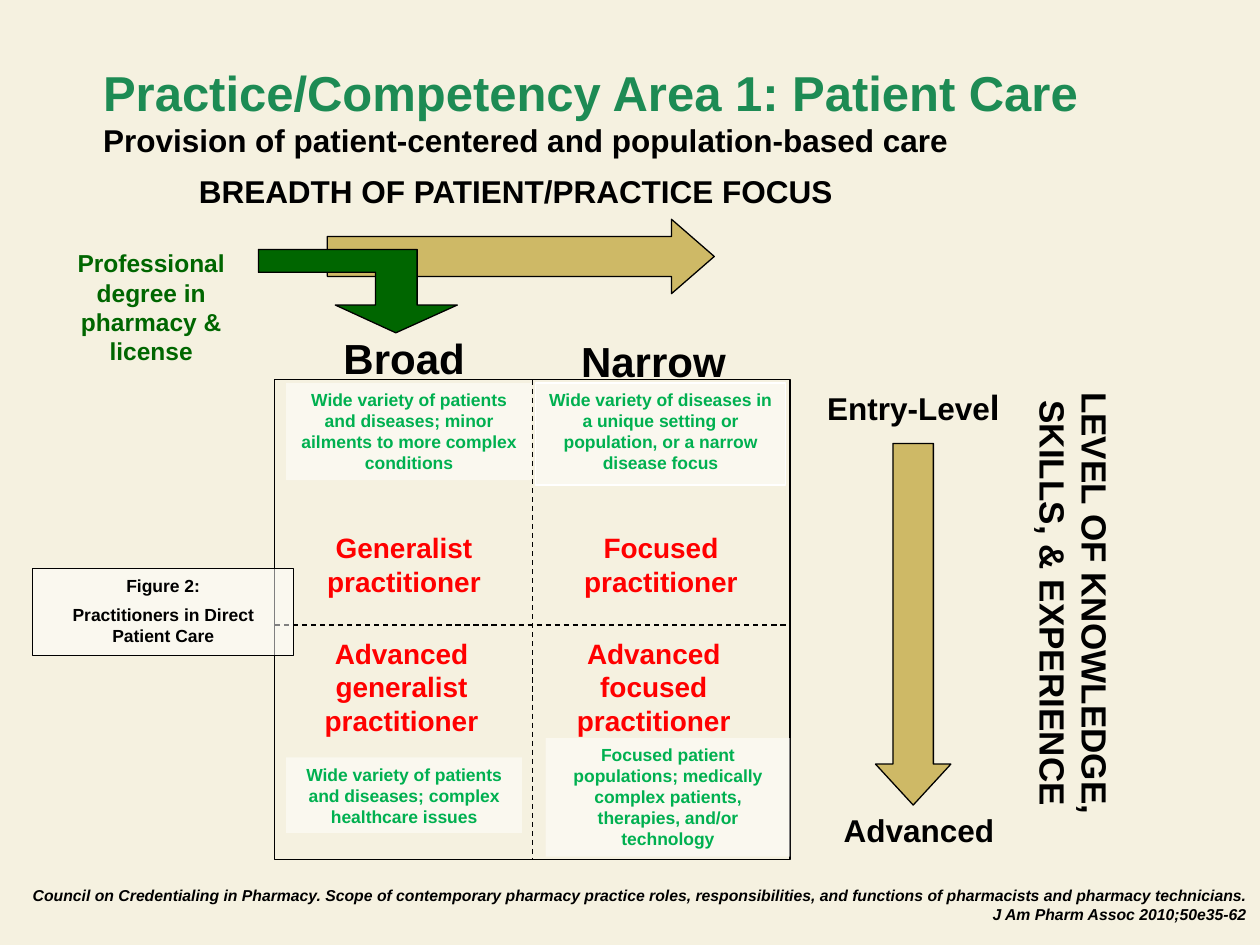
import pptx
import pptx.util
import pptx.dml.color
import pptx.enum.dml
import pptx.enum.shapes
import pptx.enum.text
import pptx.oxml.ns
import lxml.etree

Cm, Pt = pptx.util.Cm, pptx.util.Pt
Shape = pptx.enum.shapes.MSO_SHAPE
Align = pptx.enum.text.PP_ALIGN
Anchor = pptx.enum.text.MSO_ANCHOR

BLACK, WHITE, RED = "000000", "FFFFFF", "FF0000"
TITLE, GREEN, LEAF, GOLD = "1D8B54", "006600", "00B050", "CEB966"


def color(code):
    return pptx.dml.color.RGBColor.from_string(code)


def write(para, words, size=18, fill=BLACK, italic=False, font="Arial"):
    """Add one bold run to a paragraph."""
    run = para.add_run()
    run.text = words
    run.font.name, run.font.size = font, Pt(size)
    run.font.bold, run.font.italic = True, italic
    run.font.color.rgb = color(fill)


class Deck:
    def __init__(self, back):
        self.show = pptx.Presentation()
        self.show.slide_width, self.show.slide_height = Cm(25.4), Cm(19.05)
        self.slide = self.show.slides.add_slide(self.show.slide_layouts[6])
        self.slide.background.fill.solid()
        self.slide.background.fill.fore_color.rgb = color(back)
        self.shapes = self.slide.shapes

    def style(self, shape, fill=None, line=None, alpha=None):
        shape.shadow.inherit = False
        if fill:
            shape.fill.solid()
            shape.fill.fore_color.rgb = color(fill)
        else:
            shape.fill.background()
        if alpha:
            tint = shape.fill._xPr.find(".//" + pptx.oxml.ns.qn("a:srgbClr"))
            lxml.etree.SubElement(tint, pptx.oxml.ns.qn("a:alpha"), val=str(alpha * 1000))
        if line:
            shape.line.color.rgb = color(line)
            shape.line.width = Pt(0.75)
        else:
            shape.line.fill.background()
        return shape

    def block(self, area, kind=Shape.RECTANGLE, **look):
        return self.style(self.shapes.add_shape(kind, *map(Cm, area)), **look)

    def arrow(self, area, head, turn=0):
        shape = self.block(area, Shape.DOWN_ARROW, fill=GOLD, line=BLACK)
        shape.adjustments[0], shape.adjustments[1] = 0.536, head
        shape.rotation = turn

    def outline(self, points, **look):
        spots = [(Cm(x), Cm(y)) for x, y in points]
        maker = self.shapes.build_freeform(*spots[0])
        maker.add_line_segments(spots[1:], close=True)
        self.style(maker.convert_to_shape(), **look)

    def dash(self, *ends):
        line = self.shapes.add_connector(pptx.enum.shapes.MSO_CONNECTOR.STRAIGHT, *map(Cm, ends))
        line.line.color.rgb = color(BLACK)
        line.line.width = Pt(0.75)
        line.line.dash_style = pptx.enum.dml.MSO_LINE.DASH
        lxml.etree.SubElement(line._element.spPr, pptx.oxml.ns.qn("a:effectLst"))

    def fill(self, shape, lines, align=Align.CENTER, anchor=Anchor.TOP, gap=0, **form):
        frame = shape.text_frame
        frame.word_wrap, frame.vertical_anchor = True, anchor
        for i, words in enumerate(lines):
            para = frame.add_paragraph() if i else frame.paragraphs[0]
            para.alignment = align
            if i and gap:
                para.space_before = Pt(gap)
            write(para, words, **form)
        return frame

    def label(self, area, *lines, turn=0, **form):
        box = self.shapes.add_textbox(*map(Cm, area))
        box.rotation = turn
        return self.fill(box, lines, **form)

    def note(self, area, *lines, line=None, fill=LEAF, gap=0):
        box = self.block(area, fill=WHITE, alpha=50, line=line)
        self.fill(box, lines, size=10, fill=fill, gap=gap)


def main():
    deck = Deck("F5F1E0")

    # Title
    head = deck.label((1.83, 1.7, 23.14, 2.49), "Practice/Competency Area 1: Patient Care",
                      align=Align.LEFT, anchor=Anchor.MIDDLE, size=28, fill=TITLE)
    head.margin_bottom = Cm(1.55)
    head.paragraphs[0].add_line_break()
    write(head.paragraphs[0], "Provision of patient-centered and population-based care")

    # Grid of four fields
    left, top, wide, high = 5.54, 7.65, 10.39, 9.68
    deck.block((left, top, wide, high), line=BLACK)
    deck.dash(left, 12.6, left + wide, 12.6)
    deck.dash(10.74, top, 10.74, top + high)

    # Level axis
    deck.arrow((17.65, 8.94, 1.52, 7.29), 0.543)
    deck.label((15.85, 11.18, 11.61, 1.96), "LEVEL OF KNOWLEDGE, SKILLS, & EXPERIENCE",
               turn=90, size=20)
    deck.label((16.15, 16.23, 4.75, 1.02), "Advanced")
    entry = deck.label((16.36, 7.65, 4.11, 1.12), "Entry-Leve")
    write(entry.paragraphs[0], "l", size=20)

    # Breadth axis
    deck.arrow((9.75, 1.27, 1.5, 7.8), 0.575, turn=270)
    deck.label((3.15, 3.35, 14.5, 1.02), "BREADTH OF PATIENT/PRACTICE FOCUS")
    deck.label((6.17, 6.58, 3.45, 1.02), "Broad", align=Align.RIGHT, size=24)
    deck.label((11.43, 6.63, 3.45, 1.02), "Narrow", align=Align.RIGHT, size=24)

    # Degree and its bent arrow
    deck.label((1.27, 4.88, 3.56, 2.62), "Professional degree in pharmacy & license",
               size=14, fill=GREEN)
    deck.outline([(7.98, 6.71), (6.76, 6.15), (7.57, 6.15), (7.57, 5.49), (5.21, 5.49),
                  (5.21, 5.03), (8.41, 5.03), (8.41, 6.15), (9.22, 6.15)],
                 fill=GREEN, line=BLACK)

    # Roles
    for area, role in [
        ((5.82, 10.57, 4.65, 1.63), "Generalist practitioner"),
        ((11, 10.57, 4.65, 1.63), "Focused practitioner"),
        ((5.77, 12.7, 4.65, 2.31), "Advanced generalist practitioner"),
        ((10.54, 12.7, 5.28, 2.31), "Advanced focused practitioner"),
    ]:
        deck.label(area, role, size=16, fill=RED)

    # Notes on each role
    for area, words, line in [
        ((5.77, 7.72, 4.95, 1.96), "Wide variety of patients and diseases; "
         "minor ailments to more complex conditions", None),
        ((10.8, 7.72, 5.03, 2.06), "Wide variety of diseases in a unique setting or "
         "population, or a narrow disease focus", WHITE),
        ((5.77, 15.27, 4.75, 1.52), "Wide variety of patients and diseases; "
         "complex healthcare issues", None),
        ((11, 14.88, 4.93, 2.39), "Focused patient populations; medically complex "
         "patients, therapies, and/or technology", None),
    ]:
        deck.note(area, words, line=line)

    # Source and figure name
    deck.label((-0.03, 17.42, 25.4, 1.63),
               "Council on Credentialing in Pharmacy. Scope of contemporary pharmacy practice "
               "roles, responsibilities, and functions of pharmacists and pharmacy technicians.",
               "J Am Pharm Assoc 2010;50e35‐62",
               align=Align.RIGHT, anchor=Anchor.MIDDLE, size=9, italic=True)
    deck.note((0.66, 11.46, 5.26, 1.75), "Figure 2:", "Practitioners in Direct Patient Care",
              line=BLACK, fill=BLACK, gap=5)

    deck.show.save("out.pptx")


if __name__ == "__main__":
    main()
